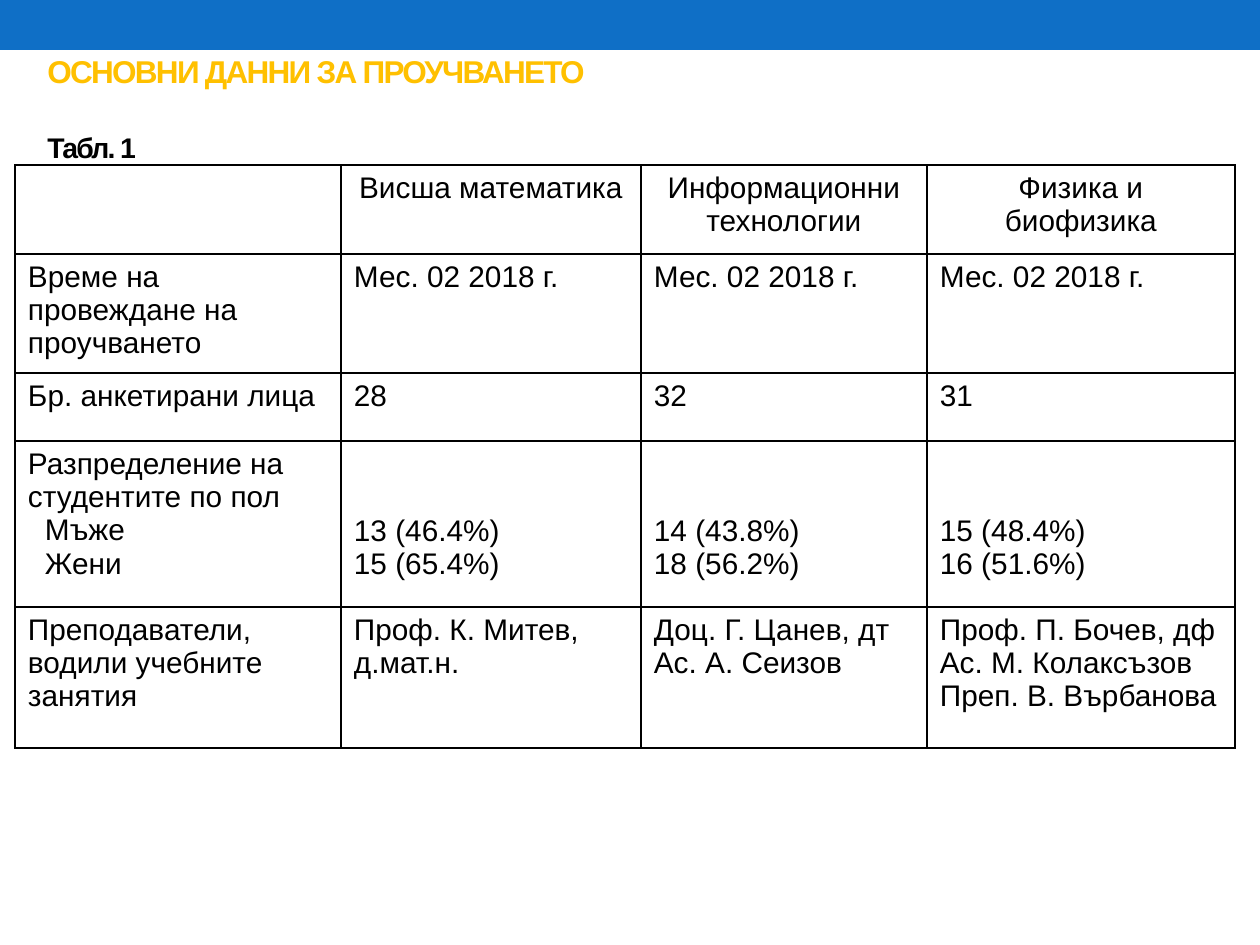
import pptx
import pptx.dml.color
import pptx.enum.shapes
import pptx.enum.text
import pptx.oxml
import pptx.oxml.ns
import pptx.util

PX = 914400 // 126
FONT = "Arial"
COLUMNS = [326, 300, 286, 308]
ROWS = [89, 113, 68, 166, 141]
GENDER_ROW = 3
LINES_ABOVE_COUNTS = 67
CELLS = [
    ["", "Висша математика", "Информационни технологии", "Физика и биофизика"],
    ["Време на провеждане на проучването"] + ["Мес. 02 2018 г."] * 3,
    ["Бр. анкетирани лица", "28", "32", "31"],
    ["Разпределение на студентите по пол\nМъже\nЖени", "13 (46.4%)\n15 (65.4%)",
     "14 (43.8%)\n18 (56.2%)", "15 (48.4%)\n16 (51.6%)"],
    ["Преподаватели, водили учебните занятия", "Проф. К. Митев, д.мат.н.",
     "Доц. Г. Цанев, дт\nАс. А. Сеизов",
     "Проф. П. Бочев, дф\nАс. М. Колаксъзов\nПреп. В. Върбанова"],
]


def px(n):
    """Turn px into EMU."""
    return pptx.util.Emu(n * PX)


def rgb(value):
    """Turn a hex string into a colour."""
    return pptx.dml.color.RGBColor.from_string(value)


def style(p, size, color, bold=False):
    """Set the font of a paragraph."""
    p.font.name = FONT
    p.font.size = pptx.util.Pt(size)
    p.font.bold = bold
    p.font.color.rgb = rgb(color)


def add_band(s, x, y, w, h):
    """Draw the blue band."""
    sp = s.shapes.add_shape(pptx.enum.shapes.MSO_SHAPE.RECTANGLE,
                            px(x), px(y), px(w), px(h))
    sp.shadow.inherit = False
    sp.fill.solid()
    sp.fill.fore_color.rgb = rgb("0F6FC6")
    sp.line.fill.background()


def add_heading(s, x, y, w, h):
    """Write the slide title and the table caption."""
    tf = s.shapes.add_textbox(px(x), px(y), px(w), px(h)).text_frame
    tf.word_wrap = True
    tf.margin_top = tf.margin_bottom = 0
    tf.text = "ОСНОВНИ ДАННИ ЗА ПРОУЧВАНЕТО\nТабл. 1"
    title, caption = tf.paragraphs
    style(title, 18, "FFC000", True)
    style(caption, 16.2, "000000", True)
    caption.space_before = pptx.util.Pt(23)
    for p in tf.paragraphs:
        p.runs[0]._r.get_or_add_rPr().set("spc", "-100")


def add_borders(cell):
    """Give a cell thin black borders on all sides."""
    tcPr = cell._tc.get_or_add_tcPr()
    for side in ("lnL", "lnR", "lnT", "lnB"):
        tcPr.append(pptx.oxml.parse_xml(
            f'<a:{side} {pptx.oxml.ns.nsdecls("a")} w="12700"><a:solidFill>'
            f'<a:srgbClr val="000000"/></a:solidFill></a:{side}>'))


def fill_cell(cell, text, row, col):
    """Write and format one table cell."""
    add_borders(cell)
    cell.fill.background()
    cell.margin_left = cell.margin_right = px(13)
    cell.margin_top = cell.margin_bottom = px(6)
    cell.text = text
    for i, p in enumerate(cell.text_frame.paragraphs):
        if row == 0:
            p.alignment = pptx.enum.text.PP_ALIGN.CENTER
        if row == GENDER_ROW and col == 0 and i > 0:
            p._p.get_or_add_pPr().set("marL", str(px(17)))
        style(p, 17, "000000")
    if row == GENDER_ROW and col > 0:
        cell.margin_top = px(6 + LINES_ABOVE_COUNTS)


def add_survey_table(s, x, y):
    """Build the table of survey data."""
    table = s.shapes.add_table(len(ROWS), len(COLUMNS), px(x), px(y),
                               px(sum(COLUMNS)), px(sum(ROWS))).table
    table.first_row = table.horz_banding = False
    for column, w in zip(table.columns, COLUMNS):
        column.width = px(w)
    for r, h in enumerate(ROWS):
        table.rows[r].height = px(h)
        for c, text in enumerate(CELLS[r]):
            fill_cell(table.cell(r, c), text, r, c)


def main():
    """Build and save the slide."""
    prs = pptx.Presentation()
    prs.slide_width, prs.slide_height = px(1260), px(945)
    s = prs.slides.add_slide(prs.slide_layouts[6])
    add_band(s, 0, 0, 1260, 50)
    add_heading(s, 35, 52, 1181, 108)
    add_survey_table(s, 15, 165)
    prs.save("out.pptx")


if __name__ == "__main__":
    main()
